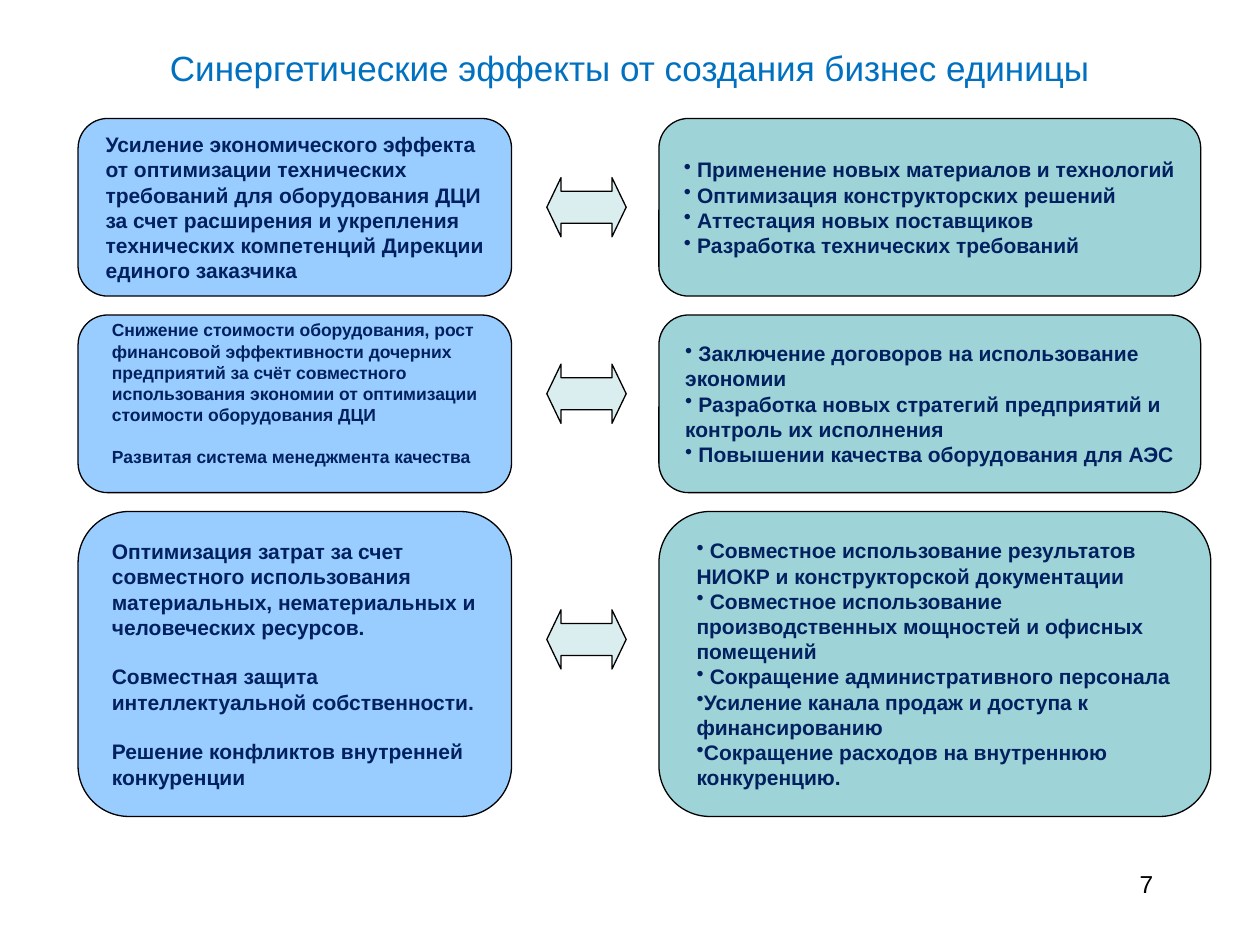
from pptx import Presentation
from pptx import util as u
from pptx.dml.color import RGBColor
from pptx.enum import shapes, text
from lxml import etree

NAVY, BLUE, TEAL, PALE = "002060", "99CCFF", "9ED3D7", "DAEDEF"
DRAWING = "{http://schemas.openxmlformats.org/drawingml/2006/main}"


def colour(value):
    return RGBColor.from_string(value)


def assign(target, values):
    for name, value in values.items():
        setattr(target, name, value)


class SlideBuilder:
    font = {"name": "Arial"}
    frame = {"word_wrap": True, "vertical_anchor": text.MSO_ANCHOR.MIDDLE}

    def __init__(self, slide):
        self.slide = slide

    def add_span(self, para, words, size, ink, bold=False):
        span = para.add_run()
        span.text = words
        assign(span.font, {**self.font, "size": u.Pt(size), "bold": bold})
        span.font.color.rgb = colour(ink)

    def label(self, place, words, size, ink, align):
        box = self.slide.shapes.add_textbox(*map(u.Inches, place))
        assign(box.text_frame, self.frame)
        para = box.text_frame.paragraphs[0]
        para.alignment = align
        self.add_span(para, words, size, ink)

    def shape(self, kind, place, fill):
        shape = self.slide.shapes.add_shape(kind, *map(u.Inches, place))
        shape.shadow.inherit = False
        shape.fill.solid()
        shape.fill.fore_color.rgb = colour(fill)
        shape.line.color.rgb = colour("000000")
        shape.line.width = u.Pt(0.75)
        return shape

    def card(self, place, fill, lines, inset, size=12, gap=0, bottom=0.05, bullets=False):
        box = self.shape(shapes.MSO_SHAPE.ROUNDED_RECTANGLE, place, fill)
        margins = {"margin_left": u.Inches(inset), "margin_bottom": u.Inches(bottom)}
        assign(box.text_frame, {**self.frame, **margins})
        for index, words in enumerate(lines):
            para = box.text_frame.add_paragraph() if index else box.text_frame.paragraphs[0]
            para.alignment = text.PP_ALIGN.LEFT
            if index and gap:
                para.space_before = u.Pt(gap)
            if bullets:
                etree.SubElement(para._p.get_or_add_pPr(), DRAWING + "buChar", char="•")
            self.add_span(para, words, size, NAVY, bold=True)

    def arrow(self, top):
        arrow = self.shape(shapes.MSO_SHAPE.LEFT_RIGHT_ARROW, (4.34, top, 0.63, 0.47), PALE)
        arrow.adjustments[0] = 0.54
        arrow.adjustments[1] = 0.24


ROWS = [
    {
        "top": 0.94, "height": 1.41, "arrow": 1.41, "width": 4.3,
        "effect": {"inset": 0.15, "lines": [
            "Усиление экономического эффекта от оптимизации технических требований для оборудования ДЦИ "
            "за счет расширения и укрепления технических компетенций Дирекции единого заказчика"]},
        "actions": {"inset": 0.13, "lines": [
            " Применение новых материалов и технологий",
            " Оптимизация конструкторских решений",
            " Аттестация новых поставщиков",
            " Разработка технических требований"]},
    },
    {
        "top": 2.5, "height": 1.41, "arrow": 2.89, "width": 4.3,
        "effect": {"inset": 0.2, "size": 10, "gap": 12, "bottom": 0.22, "lines": [
            "Снижение стоимости оборудования, рост финансовой эффективности дочерних предприятий "
            "за счёт совместного использования экономии от оптимизации стоимости оборудования ДЦИ",
            "Развитая система менеджмента качества"]},
        "actions": {"inset": 0.14, "lines": [
            " Заключение договоров на использование экономии",
            " Разработка новых стратегий предприятий и контроль их исполнения",
            " Повышении качества оборудования для АЭС"]},
    },
    {
        "top": 4.06, "height": 2.42, "arrow": 4.84, "width": 4.38,
        "effect": {"inset": 0.15, "gap": 14, "lines": [
            "Оптимизация затрат за счет совместного использования материальных, нематериальных "
            "и человеческих ресурсов.",
            "Совместная защита интеллектуальной собственности.",
            "Решение конфликтов внутренней конкуренции"]},
        "actions": {"inset": 0.18, "lines": [
            " Совместное использование результатов НИОКР и конструкторской документации",
            " Совместное использование производственных мощностей и офисных помещений",
            " Сокращение административного персонала",
            "Усиление канала продаж и доступа к финансированию",
            "Сокращение расходов на внутреннюю конкуренцию."]},
    },
]


def main():
    deck = Presentation()
    assign(deck, {"slide_width": u.Inches(10), "slide_height": u.Inches(7.5)})
    page = SlideBuilder(deck.slides.add_slide(deck.slide_layouts[6]))
    page.label((0.5, 0.26, 9, 0.56), "Синергетические эффекты от создания бизнес единицы",
               20, "0070C0", text.PP_ALIGN.CENTER)
    page.label((7.17, 6.76, 2.08, 0.5), "7", 14, "000000", text.PP_ALIGN.RIGHT)
    for row in ROWS:
        top, height = row["top"], row["height"]
        page.card((0.62, top, 3.44, height), BLUE, **row["effect"])
        page.card((5.23, top, row["width"], height), TEAL, bullets=True, **row["actions"])
        page.arrow(row["arrow"])
    deck.save("out.pptx")


if __name__ == "__main__":
    main()
